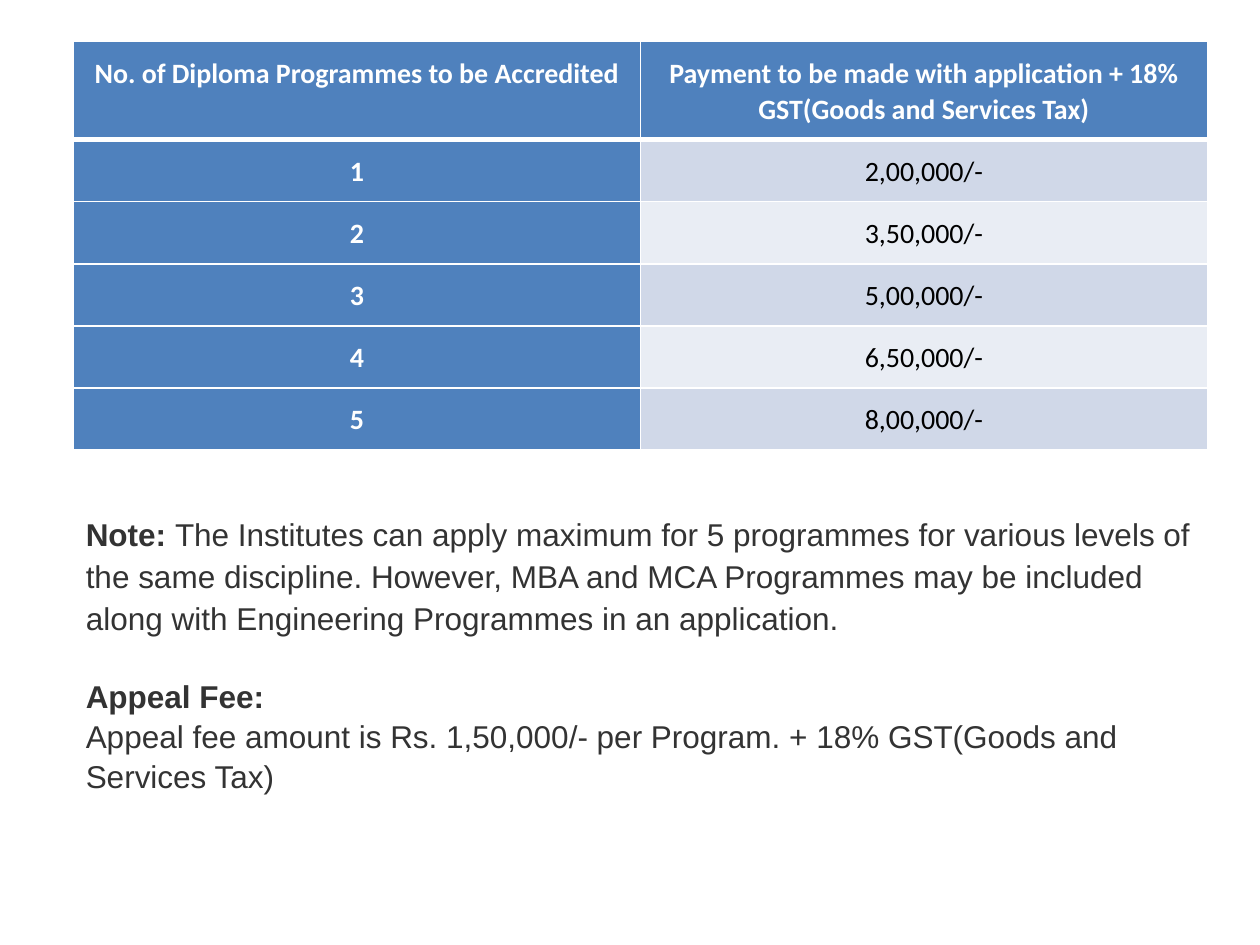
from lxml.etree import SubElement
from pptx import Presentation
from pptx.dml.color import RGBColor
from pptx.enum.text import MSO_ANCHOR, PP_ALIGN
from pptx.oxml.ns import qn
from pptx.util import Cm, Pt

WHITE = RGBColor(0xFF, 0xFF, 0xFF)
BLACK = RGBColor(0, 0, 0)
BLUE = RGBColor(0x4F, 0x81, 0xBD)
BANDS = RGBColor(0xD0, 0xD8, 0xE8), RGBColor(0xE9, 0xED, 0xF4)
CHARCOAL = RGBColor(0x33, 0x33, 0x33)

FEES = [
    ("No. of Diploma Programmes to be Accredited",
     "Payment to be made with application + 18% GST(Goods and Services Tax)"),
    ("1", "2,00,000/-"),
    ("2", "3,50,000/-"),
    ("3", "5,00,000/-"),
    ("4", "6,50,000/-"),
    ("5", "8,00,000/-"),
]
# (space before in points, line spacing, [(text, bold)])
NOTES = [
    (0, 1.12, [
        ("Note: ", True),
        ("The Institutes can apply maximum for 5 programmes for various levels of "
         "the same discipline. However, MBA and MCA Programmes may be included "
         "along with Engineering Programmes in an application.", False)]),
    (22, 1.05, [("Appeal Fee:", True)]),
    (0, 1.05, [("Appeal fee amount is Rs. 1,50,000/- per Program. + 18% GST(Goods and "
                "Services Tax)", False)]),
]
LEFT = Cm(1.48)
COLUMN_WIDTH = Cm(11.43)
HEADER_HEIGHT, ROW_HEIGHT = Cm(1.96), Cm(1.25)
CELL_MARGIN = Cm(0.25)


def style_span(span, font, size, color, bold):
    span.font.name = font
    span.font.size = Pt(size)
    span.font.color.rgb = color
    span.font.bold = bold


def add_borders(cell, bottom_width):
    properties = cell._tc.get_or_add_tcPr()
    widths = {"a:lnL": 1, "a:lnR": 1, "a:lnT": 1, "a:lnB": bottom_width}
    for position, (side, width) in enumerate(widths.items()):
        line = SubElement(properties, qn(side), w=str(Pt(width)))
        fill = SubElement(line, qn("a:solidFill"))
        SubElement(fill, qn("a:srgbClr"), val=str(WHITE))
        properties.insert(position, line)


def fill_cell(cell, text, row, column):
    strong = row == 0 or column == 0
    cell.margin_left = cell.margin_right = CELL_MARGIN
    cell.margin_top = cell.margin_bottom = CELL_MARGIN
    cell.vertical_anchor = MSO_ANCHOR.TOP
    cell.fill.solid()
    cell.fill.fore_color.rgb = BLUE if strong else BANDS[(row - 1) % 2]
    add_borders(cell, 3 if row == 0 else 1)
    cell.text_frame.text = text
    para = cell.text_frame.paragraphs[0]
    para.alignment = PP_ALIGN.CENTER
    para.line_spacing = 1.07
    style_span(para.runs[0], "Calibri", 16, WHITE if strong else BLACK, strong)


def add_fee_table(page):
    heights = [HEADER_HEIGHT] + [ROW_HEIGHT] * (len(FEES) - 1)
    table = page.shapes.add_table(len(FEES), 2, LEFT, Cm(0.84),
                                  COLUMN_WIDTH * 2, sum(heights)).table
    for row, (texts, height) in enumerate(zip(FEES, heights)):
        table.rows[row].height = height
        for column, text in enumerate(texts):
            fill_cell(table.cell(row, column), text, row, column)


def add_notes(page):
    box = page.shapes.add_textbox(LEFT, Cm(10.16), Cm(23.29), Cm(5.82))
    frame = box.text_frame
    frame.word_wrap = True
    for index, (space, spacing, pieces) in enumerate(NOTES):
        para = frame.add_paragraph() if index else frame.paragraphs[0]
        para.space_before = Pt(space)
        para.line_spacing = spacing
        for text, bold in pieces:
            span = para.add_run()
            span.text = text
            style_span(span, "Arial", 18, CHARCOAL, bold)


def main():
    deck = Presentation()
    deck.slide_width, deck.slide_height = Cm(25.4), Cm(19.05)
    page = deck.slides.add_slide(deck.slide_layouts[6])
    add_fee_table(page)
    add_notes(page)
    deck.save("out.pptx")


if __name__ == "__main__":
    main()
